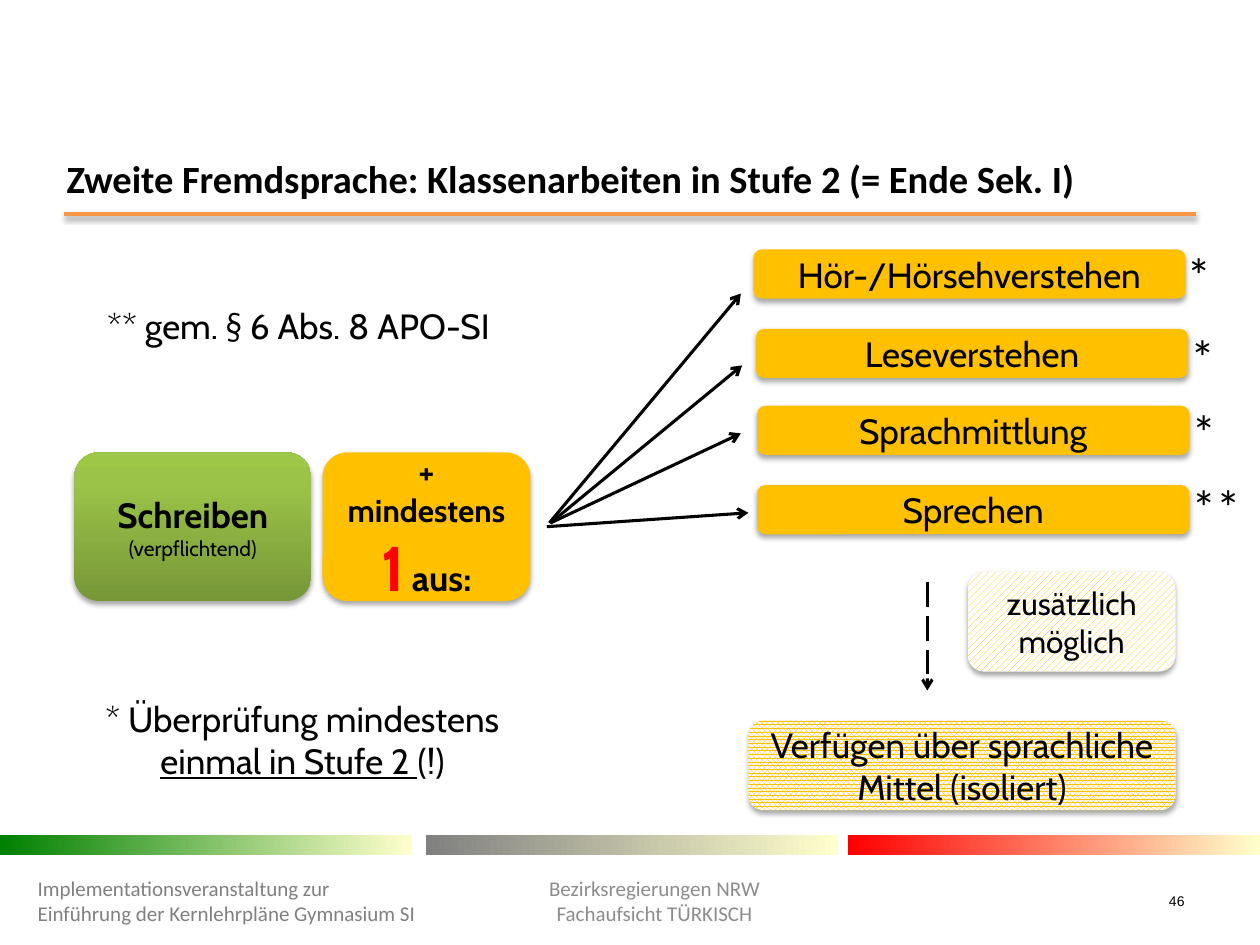
import pptx
import pptx.util
import pptx.dml.color
import pptx.enum.dml
import pptx.enum.shapes
import pptx.enum.text
import pptx.oxml
import pptx.oxml.ns
from pptx.util import Inches

RGB = pptx.dml.color.RGBColor
BLACK = RGB(0x00, 0x00, 0x00)
WHITE = RGB(0xFF, 0xFF, 0xFF)
RED = RGB(0xFF, 0x00, 0x00)
GREEN = RGB(0x00, 0x80, 0x00)
GRAY = RGB(0x80, 0x80, 0x80)
FOOTER_GRAY = RGB(0x8C, 0x8C, 0x8C)
CREAM = RGB(0xFF, 0xFF, 0xCC)
ORANGE = RGB(0xF7, 0x96, 0x46)
AMBER = RGB(0xFF, 0xC0, 0x00)
LEAF_STOPS = [(0, RGB(0x77, 0x97, 0x37)), (80, RGB(0x9B, 0xC3, 0x48)),
              (100, RGB(0x9D, 0xC7, 0x46))]

SHAPE = pptx.enum.shapes.MSO_SHAPE
PATTERN = pptx.enum.dml.MSO_PATTERN
ALIGN = pptx.enum.text.PP_ALIGN
MIDDLE = pptx.enum.text.MSO_ANCHOR.MIDDLE
TOP = pptx.enum.text.MSO_ANCHOR.TOP
NSDECLS = pptx.oxml.ns.nsdecls("a")


def set_gradient(shape, stops, angle=0):
    """Fill with (percent, colour) stops; the angle runs counter-clockwise."""
    shape.fill.gradient()
    shape.fill.gradient_angle = angle
    stop_list = shape._element.spPr.find(".//" + pptx.oxml.ns.qn("a:gsLst"))
    for old_stop in list(stop_list):
        stop_list.remove(old_stop)
    for percent, color in stops:
        stop_list.append(pptx.oxml.parse_xml(
            f'<a:gs {NSDECLS} pos="{percent * 1000}"><a:srgbClr val="{color}"/></a:gs>'))


def set_pattern(shape, pattern):
    shape.fill.patterned()
    shape.fill.pattern = pattern
    shape.fill.fore_color.rgb = AMBER
    shape.fill.back_color.rgb = WHITE


def set_solid(shape, color):
    shape.fill.solid()
    shape.fill.fore_color.rgb = color


def add_shadow(element, opacity=35, distance=1.8):
    """Replace the effects with a soft shadow that falls straight down."""
    properties = element._element.spPr
    for effects in properties.findall(pptx.oxml.ns.qn("a:effectLst")):
        properties.remove(effects)
    blur, drop = pptx.util.Pt(3.1), pptx.util.Pt(distance)
    properties.append(pptx.oxml.parse_xml(
        f'<a:effectLst {NSDECLS}><a:outerShdw blurRad="{blur}" dist="{drop}" '
        f'dir="5400000" rotWithShape="0"><a:srgbClr val="000000">'
        f'<a:alpha val="{opacity * 1000}"/></a:srgbClr></a:outerShdw></a:effectLst>'))


def style(font, size, name, color=BLACK, bold=False):
    font.size = pptx.util.Pt(size)
    font.name = name
    font.color.rgb = color
    font.bold = bold


def write(frame, lines, size, name, color=BLACK, bold=False, align=ALIGN.CENTER,
          anchor=MIDDLE):
    frame.word_wrap = True
    frame.vertical_anchor = anchor
    for index, line in enumerate(lines):
        paragraph = frame.add_paragraph() if index else frame.paragraphs[0]
        paragraph.text = line
        paragraph.alignment = align
        style(paragraph.font, size, name, color, bold)


def add_label(slide, box, lines, size, **options):
    label = slide.shapes.add_textbox(*map(Inches, box))
    write(label.text_frame, lines, size, options.pop("name", "Calibri"), **options)


def add_card(slide, box, lines, size=20, kind=SHAPE.ROUNDED_RECTANGLE):
    card = slide.shapes.add_shape(kind, *map(Inches, box))
    card.shadow.inherit = False
    card.line.fill.background()
    write(card.text_frame, lines, size, "Cabin")
    return card


def add_line(slide, start, end, color=BLACK, width=1.75, arrow=True, dash=None):
    line = slide.shapes.add_connector(
        pptx.enum.shapes.MSO_CONNECTOR.STRAIGHT, *map(Inches, (*start, *end)))
    line.line.color.rgb = color
    line.line.width = pptx.util.Pt(width)
    if dash is not None:
        line.line.dash_style = dash
    properties = line._element.spPr
    if arrow:
        properties.find(pptx.oxml.ns.qn("a:ln")).append(
            pptx.oxml.parse_xml(f'<a:tailEnd {NSDECLS} type="arrow"/>'))
    properties.append(pptx.oxml.parse_xml(f"<a:effectLst {NSDECLS}/>"))
    return line


def add_frame(slide):
    title_rule = add_line(slide, (0.51, 1.7), (9.49, 1.7), ORANGE, 2, arrow=False)
    add_shadow(title_rule, 38, 1.6)
    for left, color in ((0, GREEN), (3.38, GRAY), (6.73, RED)):
        bar = add_card(slide, (left, 6.63, 3.27, 0.16), [], kind=SHAPE.RECTANGLE)
        set_gradient(bar, [(0, color), (100, CREAM)])
    add_label(slide, (0.2, 6.95, 3.24, 0.4),
              ["Implementationsveranstaltung zur Einführung der Kernlehrpläne Gymnasium SI"],
              12, color=GRAY, align=ALIGN.LEFT)
    add_label(slide, (3.74, 6.79, 2.91, 0.71),
              ["Bezirksregierungen NRW", "Fachaufsicht TÜRKISCH"], 12, color=FOOTER_GRAY)
    add_label(slide, (8.86, 6.95, 0.64, 0.4), ["46"], 8, name="Arial", align=ALIGN.RIGHT)
    add_label(slide, (0.43, 1.18, 8.93, 0.47),
              ["Zweite Fremdsprache: Klassenarbeiten in Stufe 2 (= Ende Sek. I)"],
              22, bold=True, align=ALIGN.LEFT, anchor=TOP)


def add_skills(slide):
    """Skill bars with their footnote marks and the arrows that lead to them."""
    skills = [
        ("Hör-/Hörsehverstehen", 5.98, 1.98, "*", 9.32, 1.89, (4.36, 4.15), (5.88, 2.33)),
        ("Leseverstehen", 6, 2.61, "*", 9.35, 2.54, (4.37, 4.15), (5.89, 2.9)),
        ("Sprachmittlung", 6.01, 3.22, "*", 9.36, 3.14, (4.37, 4.15), (5.88, 3.44)),
        ("Sprechen", 6.01, 3.85, "**", 9.36, 3.73, (4.34, 4.18), (5.94, 4.07)),
    ]
    for skill, left, top, mark, mark_left, mark_top, start, end in skills:
        bar = add_card(slide, (left, top, 3.43, 0.39), [skill])
        set_solid(bar, AMBER)
        add_shadow(bar)
        mark_width = 0.36 if mark == "*" else 0.64
        add_label(slide, (mark_left, mark_top, mark_width, 0.57), [mark], 28,
                  align=ALIGN.LEFT, anchor=TOP)
        add_line(slide, start, end)


def add_requirements(slide):
    writing = add_card(slide, (0.59, 3.59, 1.88, 1.18), ["Schreiben", "(verpflichtend)"])
    set_gradient(writing, LEAF_STOPS, 90)
    add_shadow(writing)
    heading, remark = writing.text_frame.paragraphs
    heading.font.bold = True
    remark.font.size = pptx.util.Pt(12)

    choice = add_card(slide, (2.56, 3.59, 1.65, 1.18), [""])
    set_solid(choice, AMBER)
    add_shadow(choice)
    for text, size, name, color in (
            ("+", 20, "Cabin", BLACK), (" ", 18, "Calibri", BLACK),
            ("mindestens ", 18, "Cabin", BLACK), ("1", 36, "Cabin", RED),
            (" ", 18, "Cabin", BLACK), ("aus:", 20, "Cabin", BLACK)):
        run = choice.text_frame.paragraphs[0].add_run()
        run.text = text
        style(run.font, size, name, color, bold=True)


def add_footnotes(slide):
    check = add_card(slide, (0.59, 5.32, 3.62, 1.1), ["* Überprüfung mindestens", ""])
    set_solid(check, WHITE)
    for text, underlined in (("einmal in Stufe 2 ", True), ("(!)", False)):
        run = check.text_frame.paragraphs[1].add_run()
        run.text = text
        style(run.font, 20, "Cabin")
        run.font.underline = underlined
    regulation = add_card(slide, (0.56, 2.03, 3.62, 1.1), ["** gem. § 6 Abs. 8 APO-SI"])
    set_solid(regulation, WHITE)


def add_extras(slide):
    add_line(slide, (7.36, 4.62), (7.36, 5.48),
             dash=pptx.enum.dml.MSO_LINE.LONG_DASH)
    optional = add_card(slide, (7.68, 4.54, 1.65, 0.79), ["zusätzlich möglich"], 18)
    set_pattern(optional, PATTERN.WIDE_UPWARD_DIAGONAL)
    add_shadow(optional)
    resources = add_card(slide, (5.94, 5.72, 3.39, 0.71),
                         ["Verfügen über sprachliche Mittel (isoliert)"])
    set_pattern(resources, PATTERN.PERCENT_80)
    add_shadow(resources)


def main():
    deck = pptx.Presentation()
    deck.slide_width, deck.slide_height = Inches(10), Inches(7.5)
    slide = deck.slides.add_slide(deck.slide_layouts[6])
    add_frame(slide)
    add_footnotes(slide)
    add_requirements(slide)
    add_skills(slide)
    add_extras(slide)
    deck.save("out.pptx")


if __name__ == "__main__":
    main()
